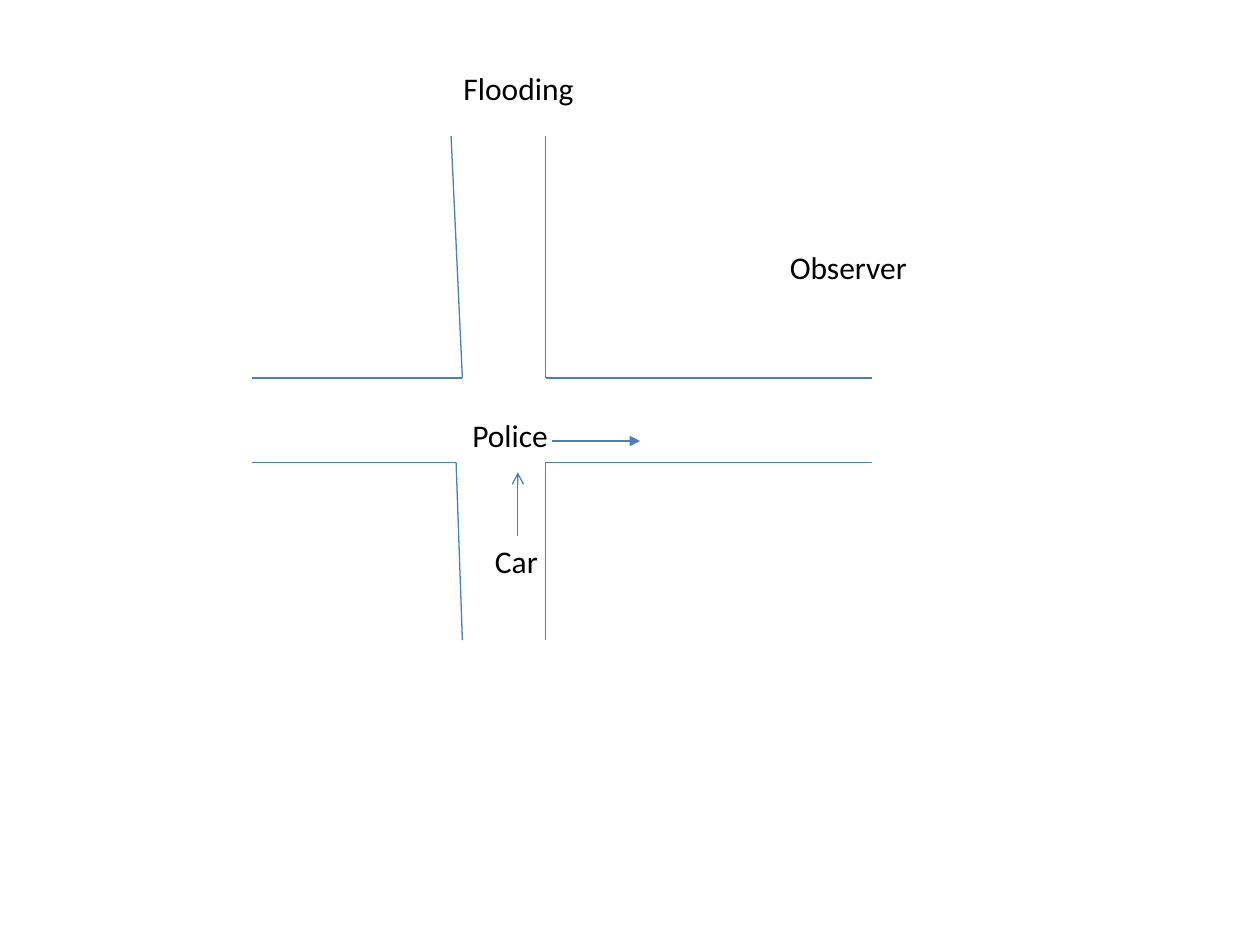
from pptx import Presentation
from pptx.dml.color import RGBColor
from pptx.enum.shapes import MSO_CONNECTOR as Connector
from pptx.enum.text import MSO_AUTO_SIZE as AutoSize
from pptx.oxml.ns import qn
from pptx.util import Inches, Pt
from lxml.etree import SubElement

ROAD_BLUE = RGBColor(0x4B, 0x7E, 0xBC)
BLACK = RGBColor(0, 0, 0)

# Edges of the crossing roads, in inches
WEST, EAST = 2, 6.92
NORTH, SOUTH = 1.08, 5.08
ROAD_TOP, ROAD_BOTTOM = 3, 3.67
UPPER_LEFT, LOWER_LEFT, ROAD_RIGHT = 3.67, 3.62, 4.33

ROAD_LINES = [
    # Upper arm
    ((3.58, NORTH), (UPPER_LEFT, ROAD_TOP)),
    ((ROAD_RIGHT, NORTH), (ROAD_RIGHT, ROAD_TOP)),
    # Right arm
    ((ROAD_RIGHT, ROAD_TOP), (EAST, ROAD_TOP)),
    ((ROAD_RIGHT, ROAD_BOTTOM), (EAST, ROAD_BOTTOM)),
    # Left arm
    ((UPPER_LEFT, ROAD_TOP), (WEST, ROAD_TOP)),
    ((LOWER_LEFT, ROAD_BOTTOM), (WEST, ROAD_BOTTOM)),
    # Lower arm
    ((LOWER_LEFT, ROAD_BOTTOM), (UPPER_LEFT, SOUTH)),
    ((ROAD_RIGHT, ROAD_BOTTOM), (ROAD_RIGHT, SOUTH)),
]


def add_line(slide, start, end, arrowhead=None):
    points = [Inches(value) for value in (*start, *end)]
    connector = slide.shapes.add_connector(Connector.STRAIGHT, *points)
    connector.line.color.rgb = ROAD_BLUE
    connector.line.width = Pt(0.75)
    if arrowhead:
        SubElement(connector.line._get_or_add_ln(), qn("a:tailEnd"), type=arrowhead)
    SubElement(connector._element.spPr, qn("a:effectLst"))
    return connector


def add_label(slide, text, left, top, width, height=0.4, wrap=False):
    box = slide.shapes.add_textbox(*map(Inches, (left, top, width, height)))
    frame = box.text_frame
    frame.word_wrap = wrap
    frame.auto_size = AutoSize.SHAPE_TO_FIT_TEXT
    run = frame.paragraphs[0].add_run()
    run.text = text
    run.font.name = "Calibri"
    run.font.size = Pt(18)
    run.font.color.rgb = BLACK
    return box


def main():
    presentation = Presentation()
    presentation.slide_width = Inches(10)
    presentation.slide_height = Inches(7.5)
    slide = presentation.slides.add_slide(presentation.slide_layouts[6])

    # Road edges
    for start, end in ROAD_LINES:
        add_line(slide, start, end)

    # Labels
    add_label(slide, "Flooding", 3.58, 0.5, 1.09)
    add_label(slide, "Police", 3.65, 3.25, 0.94, wrap=True)
    car = add_label(slide, "Car", 3.83, 4.25, 0.56)
    add_label(slide, "Observer", 6.17, 1.92, 1.14, 0.71)

    # Directions of travel
    car_arrow = add_line(slide, (4.11, 4.25), (4.11, 3.75), "arrow")
    car_arrow.begin_connect(car, 0)
    add_line(slide, (4.38, 3.5), (5.08, 3.5), "triangle")

    presentation.save("out.pptx")


if __name__ == "__main__":
    main()
